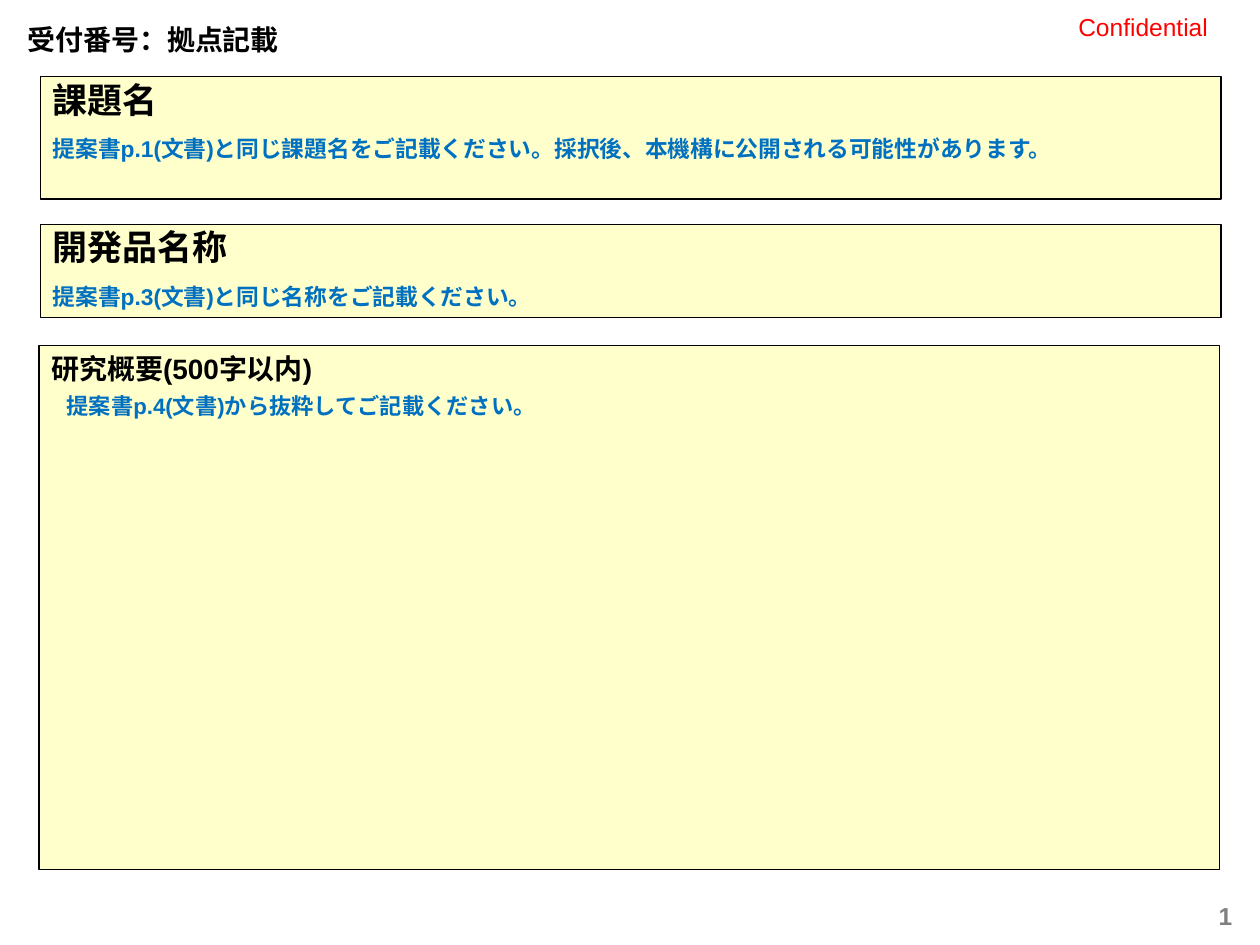
from dataclasses import dataclass

from pptx import Presentation
from pptx.dml.color import RGBColor
from pptx.enum import text as t
from pptx.enum.shapes import MSO_SHAPE
from pptx.util import Inches, Pt


@dataclass(frozen=True)
class Theme:
    paper: str = "FFFFCC"
    ink: str = "000000"
    hint: str = "0070C0"
    alert: str = "FF0000"
    muted: str = "808080"
    font: str = "Arial"
    title_font: str = "Calibri"
    large: float = 20
    medium: float = 16
    small: float = 14
    note: float = 13
    fine: float = 12.7


THEME = Theme()
LEFT, TOP, MID = t.PP_ALIGN.LEFT, t.MSO_ANCHOR.TOP, t.PP_ALIGN.CENTER


def style(para, words, size, color, bold=True, name=THEME.font, **layout):
    run = para.add_run()
    run.text = words
    for key, value in dict(size=Pt(size), bold=bold, name=name).items():
        setattr(run.font, key, value)
    run.font.color.rgb = RGBColor.from_string(color)
    for key, value in dict(dict(alignment=LEFT), **layout).items():
        setattr(para, key, value)


def place(shape, box):
    for key, value in zip(("left", "top", "width", "height"), box):
        setattr(shape, key, Inches(value))


def frame(shape, anchor=TOP, wrap=True):
    body = shape.text_frame
    body.auto_size = t.MSO_AUTO_SIZE.NONE
    body.word_wrap = wrap
    body.vertical_anchor = anchor
    return body


def label(slide, box, words, size, color, anchor=TOP, **form):
    shape = slide.shapes.add_textbox(*map(Inches, box))
    style(frame(shape, anchor, False).paragraphs[0], words, size, color, **form)


def title(slide, box, words):
    shape = slide.shapes.title
    place(shape, box)
    style(frame(shape, wrap=False).paragraphs[0], words, THEME.medium,
          THEME.ink, name=THEME.title_font)


def panel(slide, box, head, size, note=None):
    """Draw a bordered field with a heading and an optional hint below it."""
    shape = slide.shapes.add_shape(MSO_SHAPE.RECTANGLE, *map(Inches, box))
    shape.shadow.inherit = False
    shape.fill.solid()
    shape.fill.fore_color.rgb = RGBColor.from_string(THEME.paper)
    shape.line.color.rgb = RGBColor.from_string(THEME.ink)
    shape.line.width = Pt(0.75)
    body = frame(shape)
    style(body.paragraphs[0], head, size, THEME.ink,
          line_spacing=0.9 if note else 1.0)
    if note:
        style(body.add_paragraph(), note, THEME.note, THEME.hint,
              line_spacing=0.9, space_before=Pt(10))


def summary(slide, box):
    x, y, _, _ = box
    panel(slide, box, "研究概要(500字以内)", THEME.medium)
    label(slide, (x + 0.12, y + 0.3, 4.39, 0.34),
          "提案書p.4(文書)から抜粋してご記載ください。", THEME.fine, THEME.hint,
          anchor=t.MSO_ANCHOR.BOTTOM, line_spacing=0.9)


def main():
    deck = Presentation()
    deck.slide_width, deck.slide_height = Inches(10), Inches(7.5)
    slide = deck.slides.add_slide(deck.slide_layouts[5])
    title(slide, (0.12, 0.13, 2.24, 0.37), "受付番号：拠点記載")
    label(slide, (8.46, 0.05, 1.26, 0.34), "Confidential", THEME.small,
          THEME.alert, bold=False)
    panel(slide, (0.32, 0.61, 9.37, 0.97), "課題名", THEME.large,
          "提案書p.1(文書)と同じ課題名をご記載ください。"
          "採択後、本機構に公開される可能性があります。")
    panel(slide, (0.32, 1.78, 9.37, 0.74), "開発品名称", THEME.large,
          "提案書p.3(文書)と同じ名称をご記載ください。")
    summary(slide, (0.31, 2.74, 9.37, 4.16))
    label(slide, (9.45, 7.1, 0.55, 0.4), "1", THEME.small, THEME.muted,
          alignment=MID)
    deck.save("out.pptx")


if __name__ == "__main__":
    main()
